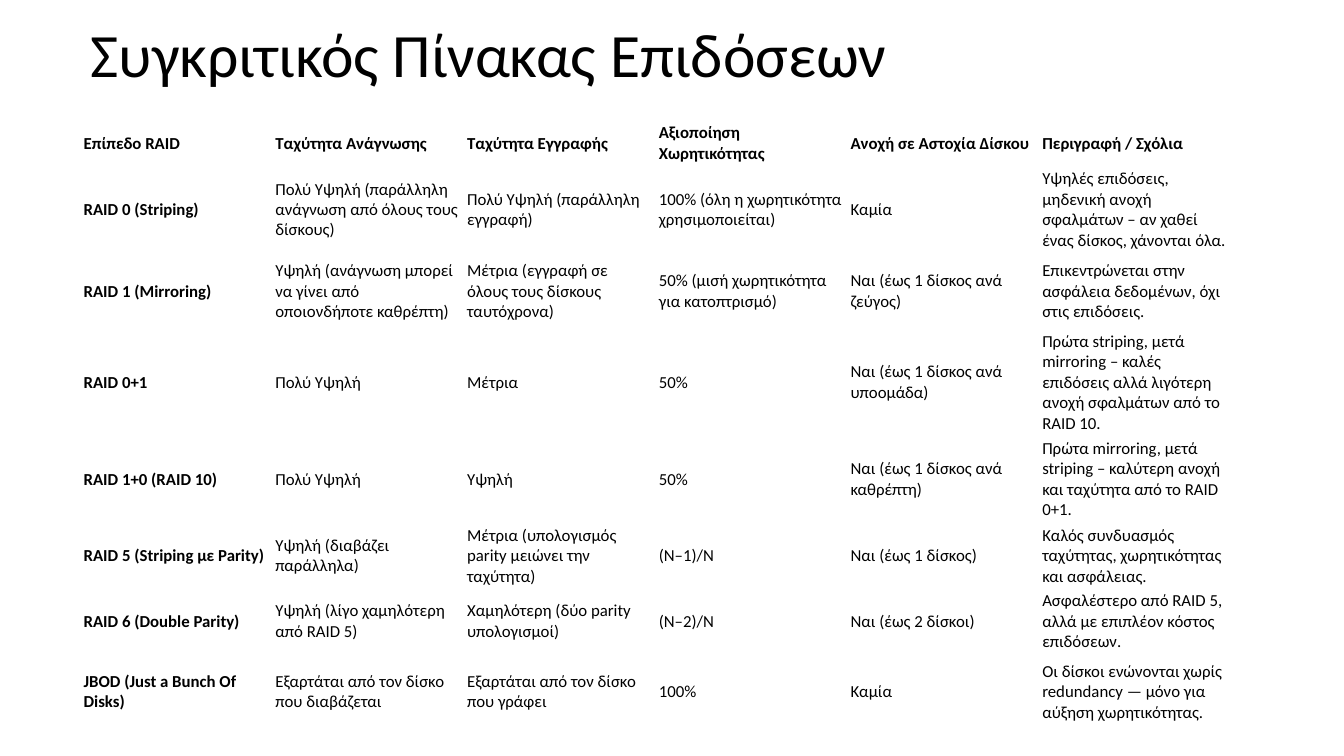
"""Build a slide with a table comparing the performance of RAID levels."""
from dataclasses import dataclass

from pptx import Presentation
from pptx.dml.color import RGBColor
from pptx.enum.text import MSO_ANCHOR, MSO_AUTO_SIZE, PP_ALIGN
from pptx.util import Inches, Pt

TITLE = "Συγκριτικός Πίνακας Επιδόσεων"
HEADER = ("Επίπεδο RAID", "Ταχύτητα Ανάγνωσης", "Ταχύτητα Εγγραφής",
          "Αξιοποίηση Χωρητικότητας", "Ανοχή σε Αστοχία Δίσκου", "Περιγραφή / Σχόλια")
LEVELS = [
    ("RAID 0 (Striping)",
     "Πολύ Υψηλή (παράλληλη ανάγνωση από όλους τους δίσκους)",
     "Πολύ Υψηλή (παράλληλη εγγραφή)",
     "100% (όλη η χωρητικότητα χρησιμοποιείται)",
     "Καμία",
     "Υψηλές επιδόσεις, μηδενική ανοχή σφαλμάτων – αν χαθεί ένας δίσκος, χάνονται όλα."),
    ("RAID 1 (Mirroring)",
     "Υψηλή (ανάγνωση μπορεί να γίνει από οποιονδήποτε καθρέπτη)",
     "Μέτρια (εγγραφή σε όλους τους δίσκους ταυτόχρονα)",
     "50% (μισή χωρητικότητα για κατοπτρισμό)",
     "Ναι (έως 1 δίσκος ανά ζεύγος)",
     "Επικεντρώνεται στην ασφάλεια δεδομένων, όχι στις επιδόσεις."),
    ("RAID 0+1",
     "Πολύ Υψηλή",
     "Μέτρια",
     "50%",
     "Ναι (έως 1 δίσκος ανά υποομάδα)",
     "Πρώτα striping, μετά mirroring – καλές επιδόσεις αλλά λιγότερη ανοχή σφαλμάτων από το RAID 10."),
    ("RAID 1+0 (RAID 10)",
     "Πολύ Υψηλή",
     "Υψηλή",
     "50%",
     "Ναι (έως 1 δίσκος ανά καθρέπτη)",
     "Πρώτα mirroring, μετά striping – καλύτερη ανοχή και ταχύτητα από το RAID 0+1."),
    ("RAID 5 (Striping με Parity)",
     "Υψηλή (διαβάζει παράλληλα)",
     "Μέτρια (υπολογισμός parity μειώνει την ταχύτητα)",
     "(N–1)/N",
     "Ναι (έως 1 δίσκος)",
     "Καλός συνδυασμός ταχύτητας, χωρητικότητας και ασφάλειας."),
    ("RAID 6 (Double Parity)",
     "Υψηλή (λίγο χαμηλότερη από RAID 5)",
     "Χαμηλότερη (δύο parity υπολογισμοί)",
     "(N–2)/N",
     "Ναι (έως 2 δίσκοι)",
     "Ασφαλέστερο από RAID 5, αλλά με επιπλέον κόστος επιδόσεων."),
    ("JBOD (Just a Bunch Of Disks)",
     "Εξαρτάται από τον δίσκο που διαβάζεται",
     "Εξαρτάται από τον δίσκο που γράφει",
     "100%",
     "Καμία",
     "Οι δίσκοι ενώνονται χωρίς redundancy — μόνο για αύξηση χωρητικότητας."),
]
ROW_HEIGHTS = (0.28, 0.87, 0.75, 0.87, 0.87, 0.63, 0.63, 0.75)
SLIDE_WIDTH, SLIDE_HEIGHT = 13.33, 7.5
LEFT = 0.06 * SLIDE_WIDTH
TABLE_TOP = 0.16 * SLIDE_HEIGHT
TABLE_WIDTH = 11.41


@dataclass(frozen=True)
class Theme:
    """Fonts, sizes and colours of the slide."""
    font: str = "Calibri"
    ink: RGBColor = RGBColor(0, 0, 0)
    title_size: int = 44
    cell_size: int = 12


THEME = Theme()


def write(frame, text, size, bold=False):
    """Write one styled run into the first paragraph of a frame."""
    para = frame.paragraphs[0]
    para.alignment = PP_ALIGN.LEFT
    span = para.add_run()
    span.text = text
    span.font.name = THEME.font
    span.font.size = Pt(size)
    span.font.bold = bold
    span.font.color.rgb = THEME.ink
    return para


def place_title(page):
    """Move and format the title placeholder."""
    box = page.shapes.title
    box.left, box.top = Inches(LEFT), Inches(-0.02 * SLIDE_HEIGHT)
    box.width, box.height = Inches(11.5), Inches(1.45)
    frame = box.text_frame
    frame.word_wrap = True
    frame.auto_size = MSO_AUTO_SIZE.NONE
    frame.vertical_anchor = MSO_ANCHOR.MIDDLE
    write(frame, TITLE, THEME.title_size).line_spacing = 0.9


def add_comparison(page):
    """Add the table of RAID levels."""
    rows = [HEADER, *LEVELS]
    table = page.shapes.add_table(
        len(rows), len(HEADER), Inches(LEFT), Inches(TABLE_TOP),
        Inches(TABLE_WIDTH), Inches(sum(ROW_HEIGHTS))).table
    table.first_row = table.horz_banding = False
    for column in table.columns:
        column.width = Inches(TABLE_WIDTH / len(HEADER))
    for row_index, (texts, height) in enumerate(zip(rows, ROW_HEIGHTS)):
        table.rows[row_index].height = Inches(height)
        for column_index, text in enumerate(texts):
            cell = table.cell(row_index, column_index)
            cell.fill.background()
            cell.vertical_anchor = MSO_ANCHOR.MIDDLE
            cell.margin_left = cell.margin_right = Inches(0.03)
            cell.margin_top = cell.margin_bottom = Inches(0.02)
            is_heading = row_index == 0 or column_index == 0
            write(cell.text_frame, text, THEME.cell_size, is_heading)


def main():
    """Create the deck and save it."""
    deck = Presentation()
    deck.slide_width, deck.slide_height = Inches(SLIDE_WIDTH), Inches(SLIDE_HEIGHT)
    page = deck.slides.add_slide(deck.slide_layouts.get_by_name("Title Only"))
    place_title(page)
    add_comparison(page)
    deck.save("out.pptx")


if __name__ == "__main__":
    main()
